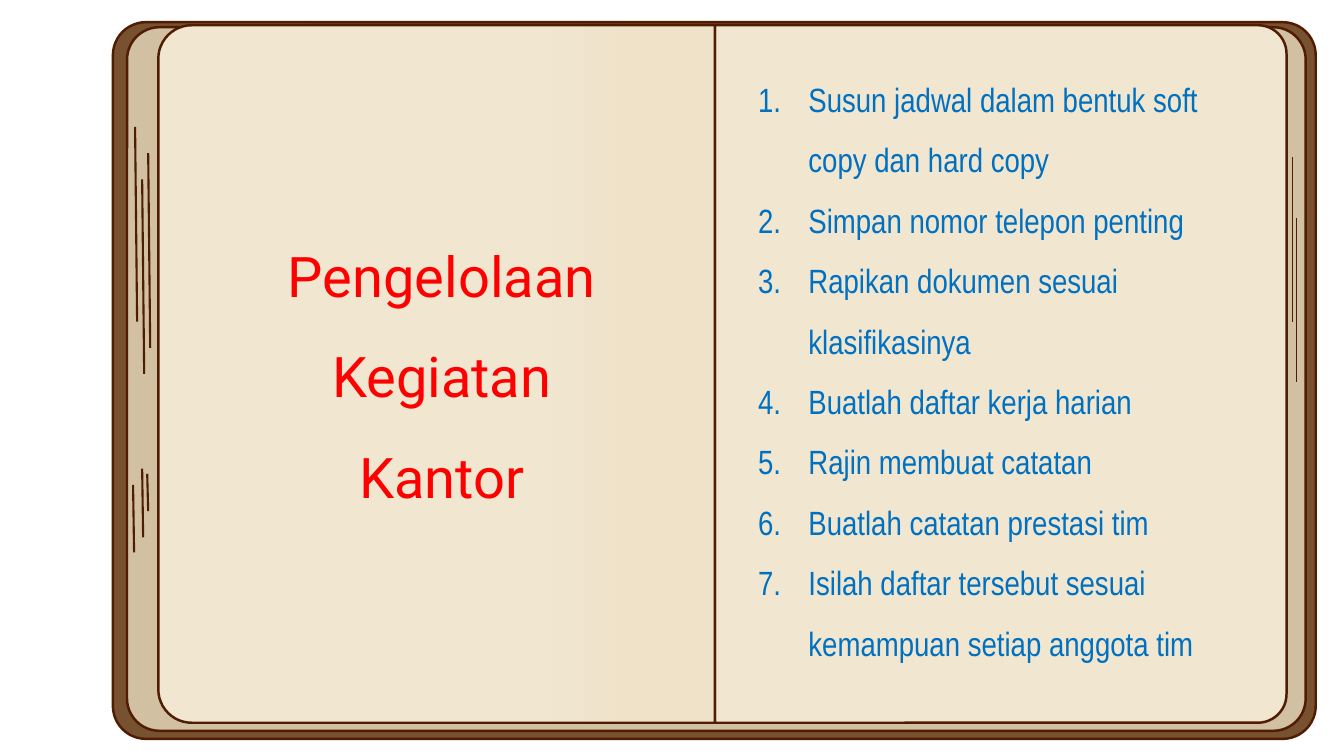
from lxml.etree import SubElement
from pptx import Presentation
from pptx.dml.color import RGBColor
from pptx.enum.shapes import MSO_CONNECTOR as CONN, MSO_SHAPE as SHAPE
from pptx.enum.text import MSO_ANCHOR as ANCHOR, MSO_AUTO_SIZE as AUTO, PP_ALIGN as ALIGN
from pptx.oxml.ns import qn
from pptx.util import Inches, Pt

TITLE = ["Pengelolaan", "Kegiatan", "Kantor"]
TIPS = [
    "Susun jadwal dalam bentuk soft \ncopy dan hard copy",
    "Simpan nomor telepon penting",
    "Rapikan dokumen sesuai \nklasifikasinya",
    "Buatlah daftar kerja harian",
    "Rajin membuat catatan",
    "Buatlah catatan prestasi tim",
    "Isilah daftar tersebut sesuai\nkemampuan setiap anggota tim",
]

COVER = RGBColor(0x78, 0x51, 0x30)
EDGES = RGBColor(0xD1, 0xC0, 0xA1)
PAPER = RGBColor(0xF1, 0xE6, 0xD0)
FOLD = RGBColor(0xEF, 0xE2, 0xC9)
INK = RGBColor(0x50, 0x1D, 0x02)
RED = RGBColor(0xFF, 0x00, 0x00)
BLUE = RGBColor(0x00, 0x70, 0xC0)

# Book, in inches: left, top, width, height
COVER_BOX = (1.12, 0.22, 11.93, 7.11)
EDGES_BOX = (1.26, 0.27, 11.69, 6.98)
PAGE_TOP, PAGE_HEIGHT = 0.25, 6.92
PAGE_LEFT, SPINE, PAGE_RIGHT = 1.57, 7.09, 12.76

# Strokes on the page edges: x, top, length, slant, line width
STROKES = [
    (1.34, 1.26, 1.93, 0.02, 1.5),
    (1.47, 1.52, 1.93, 0.02, 1.5),
    (1.41, 1.78, 1.93, 0.02, 1.5),
    (1.32, 4.81, 0.67, 0.01, 1.5),
    (1.46, 4.70, 0.37, 0.01, 1.5),
    (1.41, 4.65, 0.68, 0.01, 1.5),
    (12.82, 1.56, 1.63, 0, 1),
    (12.86, 2.16, 1.63, 0, 1),
]


def add_panel(shapes, kind, box, corner, color):
    s = shapes.add_shape(kind, *map(Inches, box))
    s.shadow.inherit = False
    s.adjustments[0] = corner
    s.fill.solid()
    s.fill.fore_color.rgb = color
    s.line.color.rgb = INK
    s.line.width = Pt(1.75)
    return s


def add_page(shapes, left, right, corner, rotation):
    """Turn a shape with two round top corners so that they face outwards."""
    width = right - left
    shift = (PAGE_HEIGHT - width) / 2
    box = (left - shift, PAGE_TOP + shift, PAGE_HEIGHT, width)
    s = add_panel(shapes, SHAPE.ROUND_2_SAME_RECTANGLE, box, corner, PAPER)
    s.rotation = rotation
    return s


def add_stroke(shapes, x, top, length, slant, width):
    ends = (x, top, x + slant, top + length)
    c = shapes.add_connector(CONN.STRAIGHT, *map(Inches, ends))
    c.line.color.rgb = INK
    c.line.width = Pt(width)
    SubElement(c._element.spPr, qn("a:effectLst"))


def write(s, lines, *, font, size, color, align=ALIGN.LEFT, numbered=False):
    tf = s.text_frame
    tf.word_wrap = True
    tf.auto_size = AUTO.NONE
    tf.vertical_anchor = ANCHOR.TOP
    for i, line in enumerate(lines):
        p = tf.add_paragraph() if i else tf.paragraphs[0]
        p.text = line
        if numbered:
            pPr = p._p.get_or_add_pPr()
            pPr.set("marL", str(Inches(0.5)))
            pPr.set("indent", str(-Inches(0.5)))
            SubElement(pPr, qn("a:buAutoNum"), type="arabicPeriod")
        p.alignment = align
        p.line_spacing = 1.5
        for r in p.runs:
            r.font.name = font
            r.font.size = Pt(size)
            r.font.color.rgb = color


def main():
    prs = Presentation()
    prs.slide_width, prs.slide_height = Inches(13.33), Inches(7.5)
    slide = prs.slides.add_slide(prs.slide_layouts[5])
    shapes = slide.shapes

    add_panel(shapes, SHAPE.ROUNDED_RECTANGLE, COVER_BOX, 0.046, COVER)
    add_panel(shapes, SHAPE.ROUNDED_RECTANGLE, EDGES_BOX, 0.046, EDGES)
    add_page(shapes, SPINE, PAGE_RIGHT, 0.05, 90)
    left_page = add_page(shapes, PAGE_LEFT, SPINE, 0.06, 270)
    left_page.fill.gradient()
    left_page.fill.gradient_angle = 270
    for stop, (position, color) in zip(left_page.fill.gradient_stops,
                                       [(0.65, PAPER), (0.88, FOLD)]):
        stop.position = position
        stop.color.rgb = color
    for stroke in STROKES:
        add_stroke(shapes, *stroke)

    title = shapes.title
    title.left, title.top, title.width, title.height = map(Inches, (2.19, 2.01, 4.38, 3.66))
    write(title, TITLE, font="Roboto", size=40, color=RED, align=ALIGN.CENTER)
    shapes._spTree.append(title._element)  # bring in front of the book

    tips = shapes.add_textbox(*map(Inches, (7.42, 0.53, 5, 6.16)))
    write(tips, TIPS, font="Arial Narrow", size=24, color=BLUE, numbered=True)

    prs.save("out.pptx")


if __name__ == "__main__":
    main()
